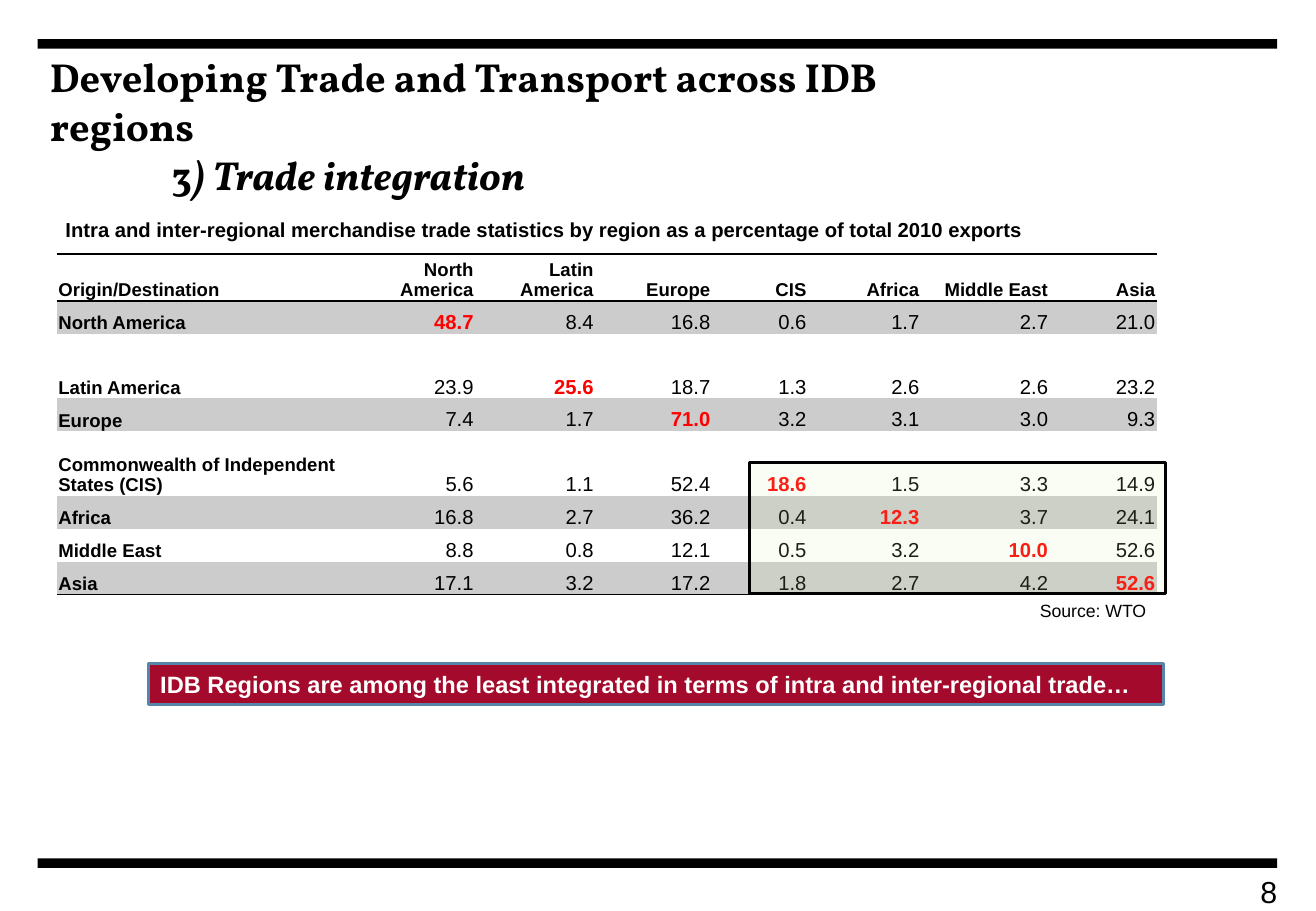
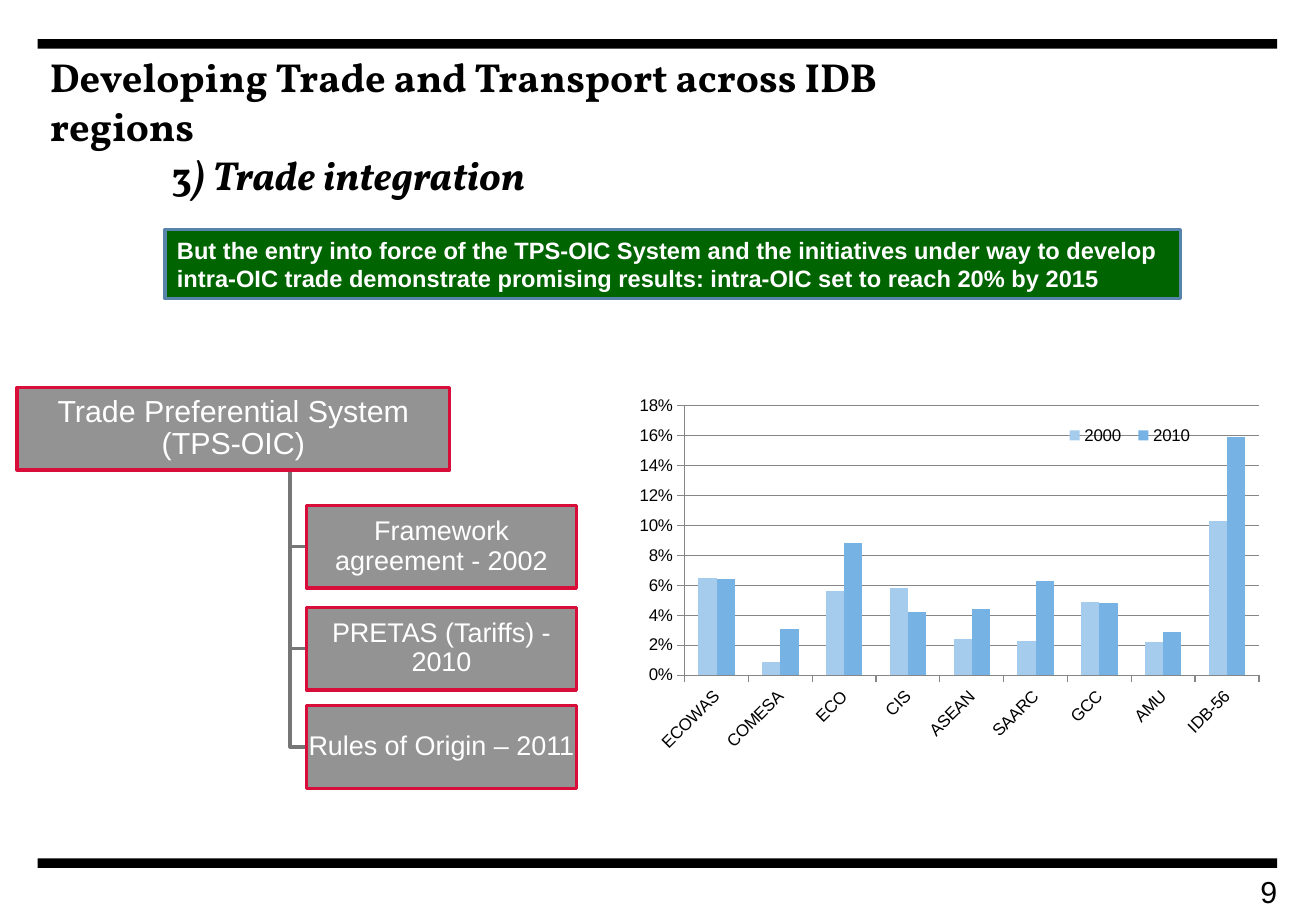
from lxml import etree
from pptx import Presentation
from pptx import util as u
from pptx.chart import data
from pptx.dml.color import RGBColor
from pptx.enum import chart as ch, shapes, text
from pptx.oxml.ns import qn

HUES = {
    "ink": "000000", "white": "FFFFFF", "hot": "FF0000", "stripe": "CCCCCC",
    "red": "A30A2B", "green": "006400", "rim": "5784A9", "focus": "DAF0A8",
    "node": "939393", "edge": "D90D39", "link": "767676", "grid": "868686",
    "pale": "A5CCED", "blue": "76B2E4",
}
NO_STYLE = "{2D5ABB26-0587-4C30-8999-92F81FD0307C}"
LEFT, MID, RIGHT = text.PP_ALIGN.LEFT, text.PP_ALIGN.CENTER, text.PP_ALIGN.RIGHT
TOP, CORE, LOW = text.MSO_ANCHOR.TOP, text.MSO_ANCHOR.MIDDLE, text.MSO_ANCHOR.BOTTOM

HEADS = ["Origin/Destination", "North America", "Latin America", "Europe",
         "CIS", "Africa", "Middle East", "Asia"]
TRADE = [
    ("North America", 48.7, 8.4, 16.8, 0.6, 1.7, 2.7, 21.0),
    ("Latin America", 23.9, 25.6, 18.7, 1.3, 2.6, 2.6, 23.2),
    ("Europe", 7.4, 1.7, 71.0, 3.2, 3.1, 3.0, 9.3),
    ("Commonwealth of Independent States (CIS)", 5.6, 1.1, 52.4, 18.6, 1.5, 3.3, 14.9),
    ("Africa", 16.8, 2.7, 36.2, 0.4, 12.3, 3.7, 24.1),
    ("Middle East", 8.8, 0.8, 12.1, 0.5, 3.2, 10.0, 52.6),
    ("Asia", 17.1, 3.2, 17.2, 1.8, 2.7, 4.2, 52.6),
]
BLOCS = ["ECOWAS", "COMESA", "ECO", "CIS", "ASEAN", "SAARC", "GCC", "AMU", "IDB-56"]
SHARES = {
    "2000": ("pale", [0.065, 0.009, 0.056, 0.058, 0.024, 0.023, 0.049, 0.022, 0.103]),
    "2010": ("blue", [0.064, 0.031, 0.088, 0.042, 0.044, 0.063, 0.048, 0.029, 0.159]),
}


def rgb(hue):
    return RGBColor.from_string(HUES[hue])


def layout(x, y, w, h, inner=False):
    """Manual chart layout, in fractions of the chart's frame."""
    node = etree.Element(qn("c:layout"))
    man = etree.SubElement(node, qn("c:manualLayout"))
    pairs = [("xMode", "edge"), ("yMode", "edge"), ("x", x), ("y", y), ("w", w), ("h", h)]
    if inner:
        pairs.insert(0, ("layoutTarget", "inner"))
    for tag, val in pairs:
        etree.SubElement(man, qn("c:" + tag)).set("val", str(val))
    return node


class Deck:
    def __init__(self):
        self.prs = Presentation()
        self.prs.slide_width, self.prs.slide_height = u.Cm(27.51), u.Cm(19.05)
        self.slide = None

    def page(self, num):
        """Start a slide with the shared bands, title and number."""
        self.slide = self.prs.slides.add_slide(self.prs.slide_layouts[5])
        for top in (0.82, 17.95):
            self.box(0.79, top, 25.91, 0.2, "ink")
        self.title()
        self.label(25.2, 18.26, 1.5, 0.6, str(num), 18, align=RIGHT, pad=(0, 0))

    def title(self):
        head = self.slide.shapes.title
        head.left, head.top, head.width, head.height = map(u.Cm, (0.79, 0.97, 20.88, 3.1))
        frame = head.text_frame
        frame.text = "Developing Trade and Transport across IDB regions\n3"
        frame.auto_size = text.MSO_AUTO_SIZE.NONE
        frame.word_wrap, frame.vertical_anchor = True, TOP
        sub = frame.paragraphs[1]
        sub.add_run().text = ") Trade integration"
        self.style(frame, 24, "ink", True, LEFT, "Vollkorn")
        sub.runs[1].font.italic = True
        sub._p.get_or_add_pPr().set("marL", str(u.Cm(2.54)))

    def style(self, frame, size, hue="ink", bold=False, align=LEFT, face="Arial"):
        for para in frame.paragraphs:
            para.alignment = align
            for run in para.runs:
                font = run.font
                font.name, font.size, font.bold = face, u.Pt(size), bold
                font.color.rgb = rgb(hue)

    def fill_in(self, shape, words, size, hue, bold, align, anchor, pad):
        """Put styled words into a shape."""
        frame = shape.text_frame
        frame.text = words
        frame.word_wrap, frame.vertical_anchor = True, anchor
        frame.margin_left = frame.margin_right = u.Cm(pad[0])
        frame.margin_top = frame.margin_bottom = u.Cm(pad[1])
        self.style(frame, size, hue, bold, align)

    def label(self, x, y, w, h, words, size, bold=False, align=LEFT, pad=(0.25, 0.13)):
        shape = self.slide.shapes.add_textbox(*map(u.Cm, (x, y, w, h)))
        self.fill_in(shape, words, size, "ink", bold, align, TOP, pad)

    def box(self, x, y, w, h, fill, line=None, width=2, alpha=None):
        shape = self.slide.shapes.add_shape(
            shapes.MSO_SHAPE.RECTANGLE, *map(u.Cm, (x, y, w, h)))
        shape.shadow.inherit = False
        shape.fill.solid()
        shape.fill.fore_color.rgb = rgb(fill)
        if alpha:
            tint = shape.element.spPr.find(qn("a:solidFill"))[0]
            etree.SubElement(tint, qn("a:alpha")).set("val", str(alpha * 1000))
        if line:
            shape.line.color.rgb = rgb(line)
            shape.line.width = u.Pt(width)
        else:
            shape.line.fill.background()
        return shape

    def banner(self, x, y, h, fill, words):
        shape = self.box(x, y, 21.23, h, fill, "rim")
        self.fill_in(shape, words, 14, "white", True, LEFT, CORE, (0.25, 0.13))

    def node(self, x, y, w, words, size):
        shape = self.box(x, y, w, 1.73, "node", "edge")
        self.fill_in(shape, words, size, "white", False, MID, CORE, (0.03, 0.03))
        shape.text_frame.paragraphs[0].line_spacing = 0.9

    def elbow(self, *ends):
        wire = self.slide.shapes.add_connector(
            shapes.MSO_CONNECTOR.ELBOW, *map(u.Cm, ends))
        wire.line.color.rgb = rgb("link")
        wire.line.width = u.Pt(2)
        etree.SubElement(wire.element.spPr, qn("a:effectLst"))

    def rule(self, cell, *sides):
        """Draw black borders on the given sides (T, B) of a cell."""
        props = cell._tc.get_or_add_tcPr()
        for spot, side in enumerate(sides):
            line = etree.Element(qn("a:ln" + side), w=str(u.Pt(1)))
            fill = etree.SubElement(line, qn("a:solidFill"))
            etree.SubElement(fill, qn("a:srgbClr"), val=HUES["ink"])
            props.insert(spot, line)

    def table(self, x, y, cols, rows):
        """Trade matrix: striped rows, with the diagonal in red."""
        grid = [HEADS] + TRADE
        frame = self.slide.shapes.add_table(
            len(rows), len(cols), *map(u.Cm, (x, y, sum(cols), sum(rows))))
        frame.element.find(".//" + qn("a:tableStyleId")).text = NO_STYLE
        table = frame.table
        table.first_row = table.horz_banding = False
        for col, width in zip(table.columns, cols):
            col.width = u.Cm(width)
        for row, high in zip(table.rows, rows):
            row.height = u.Cm(high)
        for r, line in enumerate(grid):
            for c, item in enumerate(line):
                self.cell(table.cell(r, c), item, r, c, r == len(grid) - 1)

    def cell(self, cell, item, r, c, last):
        name, own = r == 0 or c == 0, r == c and r > 0
        cell.text_frame.text = str(item)
        cell.vertical_anchor = LOW
        cell.margin_left = cell.margin_right = cell.margin_top = u.Cm(0.03)
        cell.margin_bottom = 0
        self.style(cell.text_frame, 11 if name else 12, "hot" if own else "ink",
                   name or own, RIGHT if c else LEFT)
        if r % 2:
            cell.fill.solid()
            cell.fill.fore_color.rgb = rgb("stripe")
        else:
            cell.fill.background()
        if r == 0:
            self.rule(cell, "T", "B")
        elif last:
            self.rule(cell, "B")

    def chart(self, x, y, w, h):
        feed = data.CategoryChartData(number_format="0%")
        feed.categories = BLOCS
        for name, (_, vals) in SHARES.items():
            feed.add_series(name, vals)
        chart = self.slide.shapes.add_chart(
            ch.XL_CHART_TYPE.COLUMN_CLUSTERED, *map(u.Cm, (x, y, w, h)), feed).chart
        chart.has_title = False
        chart.font.name, chart.font.size = "Arial", u.Pt(10)
        chart.font.color.rgb = rgb("ink")
        plot = chart.plots[0]
        plot.gap_width, plot.overlap, plot.vary_by_categories = 150, 0, False
        for bars, (hue, _) in zip(plot.series, SHARES.values()):
            bars.format.fill.solid()
            bars.format.fill.fore_color.rgb = rgb(hue)
        cats, vals = chart.category_axis, chart.value_axis
        vals.minimum_scale, vals.maximum_scale, vals.major_unit = 0, 0.18, 0.02
        vals.tick_labels.number_format = "0%"
        vals.tick_labels.number_format_is_linked = False
        vals.has_major_gridlines = True
        for part in (cats, vals, vals.major_gridlines):
            part.format.line.color.rgb = rgb("grid")
            part.format.line.width = u.Pt(0.75)
        for axis in (cats, vals):
            axis.major_tick_mark = ch.XL_TICK_MARK.OUTSIDE
            axis.tick_labels.font.size = u.Pt(10)
        root = chart.element
        turn = root.find(".//" + qn("c:catAx")).find(".//" + qn("a:bodyPr"))
        turn.set("rot", "-2700000")
        chart.has_legend = True
        chart.legend.position = ch.XL_LEGEND_POSITION.TOP
        chart.legend.include_in_layout = True
        for old in list(root.iter(qn("c:layout"))):
            old.getparent().remove(old)
        area = root.find(".//" + qn("c:plotArea"))
        area.insert(0, layout(0.08, 0.05, 0.8, 0.73, inner=True))
        root.find(".//" + qn("c:legendPos")).addnext(layout(0.6, 0.09, 0.2, 0.08))


def main():
    deck = Deck()
    deck.page(8)
    deck.banner(3.1, 13.87, 0.86, "red",
                "IDB Regions are among the least integrated in terms of "
                "intra and inter-regional trade…")
    deck.table(1.19, 5.31, [6.1, 2.64, 2.51, 2.44, 2.01, 2.36, 2.69, 2.24],
               [0.98] + [0.69, 1.35] * 2 + [0.69] * 3)
    deck.label(21.49, 12.42, 2.77, 0.71, "Source: WTO", 10.5)
    deck.box(15.67, 9.68, 8.69, 2.74, "focus", "ink", 1.75, alpha=13)
    deck.label(1.12, 4.42, 20.88, 0.76,
               "Intra and inter-regional merchandise trade statistics by region "
               "as a percentage of total 2010 exports", 12, bold=True)

    deck.page(9)
    steps = [(10.57, "Framework agreement - 2002"),
             (12.7, "PRETAS (Tariffs) - 2010"),
             (14.76, "Rules of Origin – 2011")]
    for top, _ in steps:
        deck.elbow(5.72, 8.97, 6.41, top + 0.86)
    deck.node(0.36, 8.1, 9.04, "Trade Preferential System (TPS-OIC)", 18)
    for top, words in steps:
        deck.node(6.41, top, 5.64, words, 16)
    deck.chart(13.11, 8.1, 15.01, 7.72)
    deck.banner(3.45, 4.8, 1.45, "green",
                "But the entry into force of the TPS-OIC System and the initiatives "
                "under way to develop intra-OIC trade demonstrate promising results: "
                "intra-OIC set to reach 20% by 2015")
    deck.prs.save("out.pptx")


if __name__ == "__main__":
    main()
